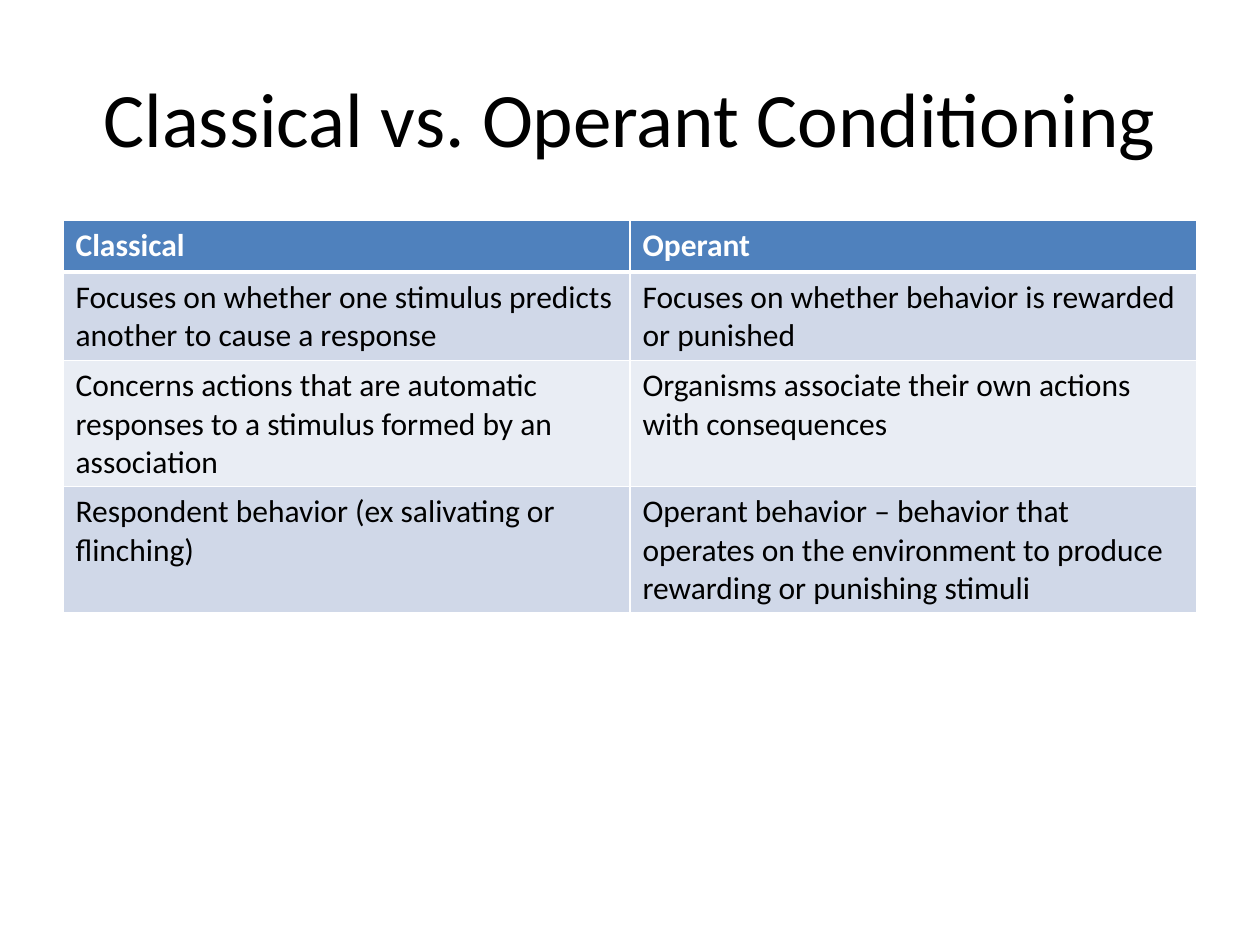
from typing import NamedTuple

from lxml import etree
from pptx import Presentation
from pptx import util as u
from pptx.dml.color import RGBColor
from pptx.enum import text
from pptx.oxml import ns

WHITE, BLACK = "FFFFFF", "000000"


class RowStyle(NamedTuple):
    fill: str
    color: str = BLACK
    bold: bool = False
    bottom_width: float = 1


HEADER = RowStyle("4F81BD", WHITE, True, 3)
BANDS = (RowStyle("D0D8E8"), RowStyle("E9EDF4"))

ROWS = [
    ("Classical", "Operant"),
    ("Focuses on whether one stimulus predicts another to cause a response",
     "Focuses on whether behavior is rewarded or punished"),
    ("Concerns actions that are automatic responses to a stimulus formed by an association",
     "Organisms associate their own actions with consequences"),
    ("Respondent behavior (ex salivating or flinching)",
     "Operant behavior – behavior that operates on the environment to produce "
     "rewarding or punishing stimuli"),
]


def rgb(value: str) -> RGBColor:
    return RGBColor.from_string(value)


def write_text(paragraph, content: str, size: float, color: str, bold: bool = False) -> None:
    run = paragraph.add_run()
    run.text = content
    formats = {"name": "Calibri", "size": u.Pt(size), "bold": bold}
    for attribute, value in formats.items():
        setattr(run.font, attribute, value)
    run.font.color.rgb = rgb(color)


def add_borders(cell, widths: dict[str, float]) -> None:
    properties = cell._tc.get_or_add_tcPr()
    for position, (side, width) in enumerate(widths.items()):
        line = etree.Element(ns.qn(f"a:ln{side}"), w=str(u.Pt(width)))
        fill = etree.SubElement(line, ns.qn("a:solidFill"))
        etree.SubElement(fill, ns.qn("a:srgbClr"), val=WHITE)
        # Borders come before the cell fill
        properties.insert(position, line)


def add_title(slide, content: str) -> None:
    box = slide.shapes.add_textbox(u.Inches(0.5), u.Inches(0.3), u.Inches(9), u.Inches(1.25))
    frame = box.text_frame
    formats = {"word_wrap": True, "vertical_anchor": text.MSO_ANCHOR.MIDDLE}
    for attribute, value in formats.items():
        setattr(frame, attribute, value)
    paragraph = frame.paragraphs[0]
    paragraph.alignment = text.PP_ALIGN.CENTER
    write_text(paragraph, content, 44, BLACK)


def add_comparison(slide, rows: list[tuple[str, str]]) -> None:
    row_height = u.Inches(0.41)
    table = slide.shapes.add_table(
        len(rows), len(rows[0]), u.Inches(0.5), u.Inches(1.75),
        u.Inches(9), row_height * len(rows)).table
    for row_index, contents in enumerate(rows):
        table.rows[row_index].height = row_height
        style = BANDS[(row_index - 1) % 2] if row_index else HEADER
        top_width = HEADER.bottom_width if row_index == 1 else 1
        for column_index, content in enumerate(contents):
            cell = table.cell(row_index, column_index)
            cell.fill.solid()
            cell.fill.fore_color.rgb = rgb(style.fill)
            write_text(cell.text_frame.paragraphs[0], content, 18, style.color, style.bold)
            add_borders(cell, {"L": 1, "R": 1, "T": top_width, "B": style.bottom_width})


def main() -> None:
    presentation = Presentation()
    presentation.slide_width = u.Inches(10)
    presentation.slide_height = u.Inches(7.5)
    slide = presentation.slides.add_slide(presentation.slide_layouts[6])

    # Heading
    add_title(slide, "Classical vs. Operant Conditioning")
    # Comparison table
    add_comparison(slide, ROWS)

    presentation.save("out.pptx")


if __name__ == "__main__":
    main()
